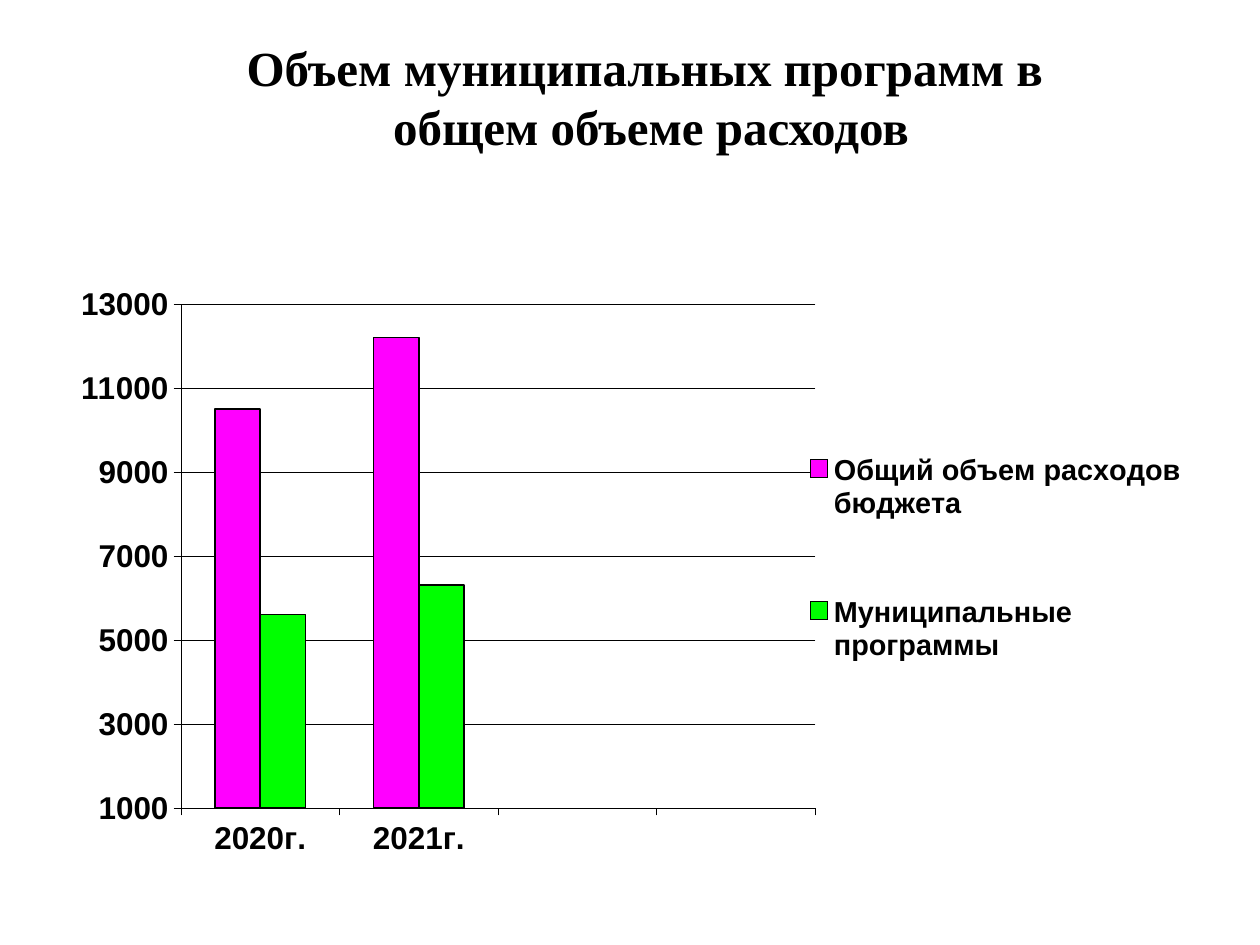
from lxml import etree
from pptx import Presentation
from pptx.chart.data import CategoryChartData
from pptx.dml.color import RGBColor
from pptx.enum.chart import XL_CHART_TYPE, XL_LEGEND_POSITION, XL_TICK_LABEL_POSITION, XL_TICK_MARK
from pptx.enum.text import MSO_ANCHOR, PP_ALIGN
from pptx.oxml.ns import qn
from pptx.util import Emu, Pt

COLUMNS = XL_CHART_TYPE.COLUMN_CLUSTERED
RIGHT = XL_LEGEND_POSITION.RIGHT
LOW = XL_TICK_LABEL_POSITION.LOW
OUTSIDE = XL_TICK_MARK.OUTSIDE
CENTER = PP_ALIGN.CENTER
MIDDLE = MSO_ANCHOR.MIDDLE

EMU_PER_PX = 914400 / 126
BLACK = "000000"
TITLE_AREA = (84, 17, 1134, 158)
CHART_AREA = (81, 276, 1118, 610)
PLOT_AREA = (180, 304, 635, 504)
LEGEND_AREA = (800, 378, 391, 360)
CATEGORIES = ["2020г.", "2021г.", "", ""]
SERIES = [
    ("Общий объем расходов бюджета", [10500, 12200, None, None], "FF00FF"),
    ("Муниципальные программы", [5600, 6300, None, None], "00FF00"),
]


def px(length):
    return Emu(round(length * EMU_PER_PX))


def color(value):
    return RGBColor.from_string(value)


def set_font(font, name="Arial", size=18, bold=True, fill=BLACK):
    font.name = name
    font.size = Pt(size)
    font.bold = bold
    font.color.rgb = color(fill)


def set_line(line, width=0.25, fill=BLACK):
    line.width = Pt(width)
    line.color.rgb = color(fill)


def add_text(page, area, lines, align=CENTER, **style):
    box = page.shapes.add_textbox(*map(px, area))
    frame = box.text_frame
    frame.word_wrap = True
    frame.vertical_anchor = MIDDLE
    for index, text in enumerate(lines):
        para = frame.paragraphs[0] if index == 0 else frame.add_paragraph()
        para.alignment = align
        span = para.add_run()
        span.text = text
        set_font(span.font, **style)


def place(element, position, area, inner=False):
    for old in element.findall(qn("c:layout")):
        element.remove(old)
    left, top, width, height = CHART_AREA
    x, y, w, h = area
    settings = {"layoutTarget": "inner"} if inner else {}
    settings.update(
        xMode="edge",
        yMode="edge",
        x=(x - left) / width,
        y=(y - top) / height,
        w=w / width,
        h=h / height,
    )
    layout = etree.Element(qn("c:layout"))
    manual = etree.SubElement(layout, qn("c:manualLayout"))
    for tag, value in settings.items():
        etree.SubElement(manual, qn(f"c:{tag}")).set("val", str(value))
    element.insert(position, layout)


def style_axis(axis):
    axis.major_tick_mark = OUTSIDE
    set_font(axis.tick_labels.font)
    set_line(axis.format.line)


def add_legend(chart):
    chart.has_legend = True
    legend = chart.legend
    legend.position = RIGHT
    legend.include_in_layout = False
    set_font(legend.font, size=16.5)
    place(legend._element, 1, LEGEND_AREA)


def add_column_chart(page):
    data = CategoryChartData()
    data.categories = CATEGORIES
    for name, values, _ in SERIES:
        data.add_series(name, values)
    chart = page.shapes.add_chart(COLUMNS, *map(px, CHART_AREA), data).chart
    chart.has_title = False
    set_font(chart.font)

    plot = chart.plots[0]
    plot.vary_by_categories = False
    plot.gap_width = 150
    plot.overlap = 0
    for series, (_, _, fill) in zip(plot.series, SERIES):
        series.invert_if_negative = False
        series.format.fill.solid()
        series.format.fill.fore_color.rgb = color(fill)
        set_line(series.format.line, width=1)

    style_axis(chart.category_axis)
    chart.category_axis.tick_label_position = LOW
    value_axis = chart.value_axis
    style_axis(value_axis)
    value_axis.minimum_scale = 1000
    value_axis.maximum_scale = 13000
    value_axis.major_unit = 2000
    value_axis.has_major_gridlines = True
    set_line(value_axis.major_gridlines.format.line)
    value_axis.tick_labels.number_format = "General"
    value_axis.tick_labels.number_format_is_linked = False

    add_legend(chart)
    place(chart._chartSpace.chart.plotArea, 0, PLOT_AREA, inner=True)


def main():
    deck = Presentation()
    deck.slide_width = px(1260)
    deck.slide_height = px(945)
    page = deck.slides.add_slide(deck.slide_layouts[6])
    title = ["Объем муниципальных программ в ", "общем объеме расходов"]
    add_text(page, TITLE_AREA, title, name="Times New Roman", size=28)
    add_column_chart(page)
    deck.save("out.pptx")


if __name__ == "__main__":
    main()
